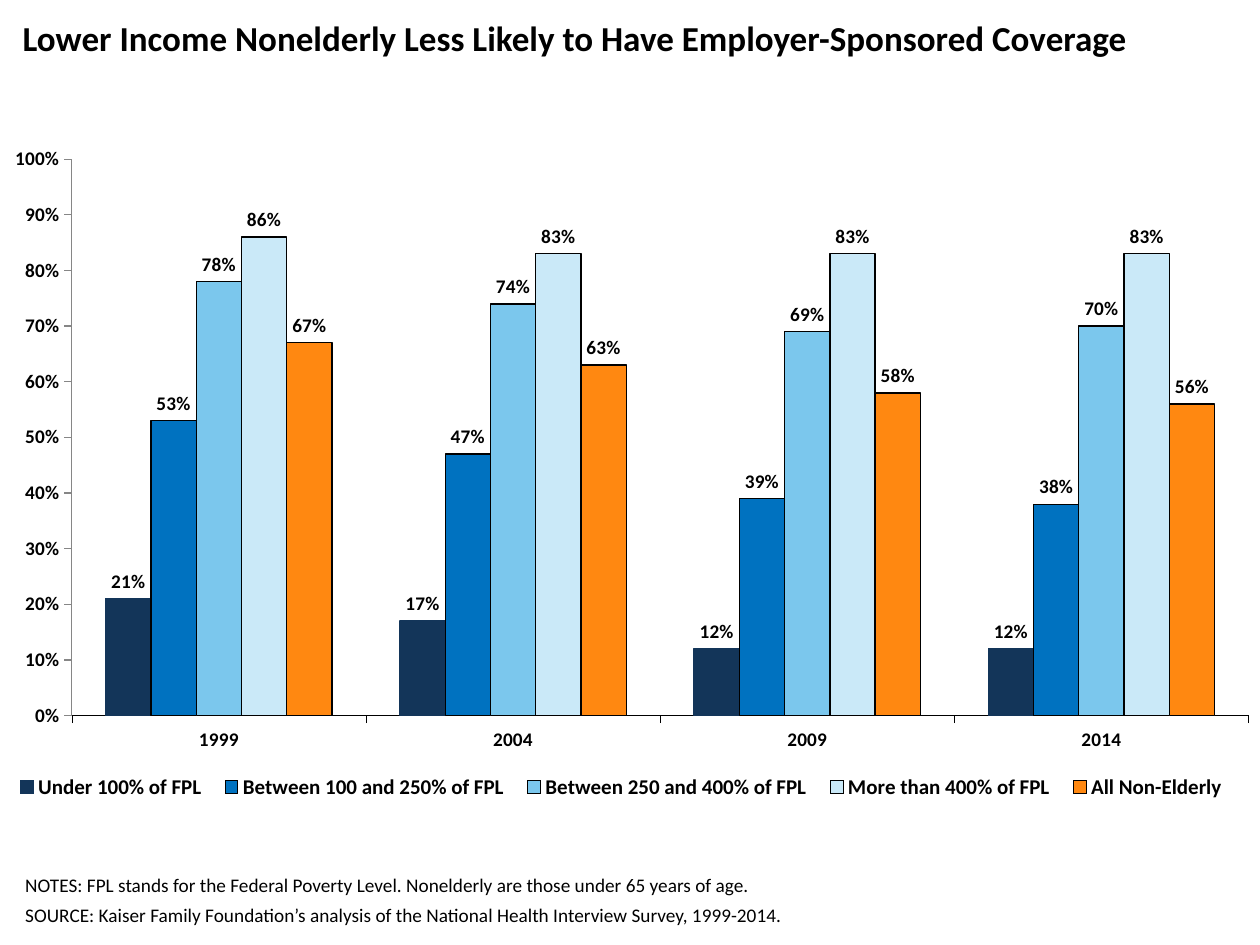
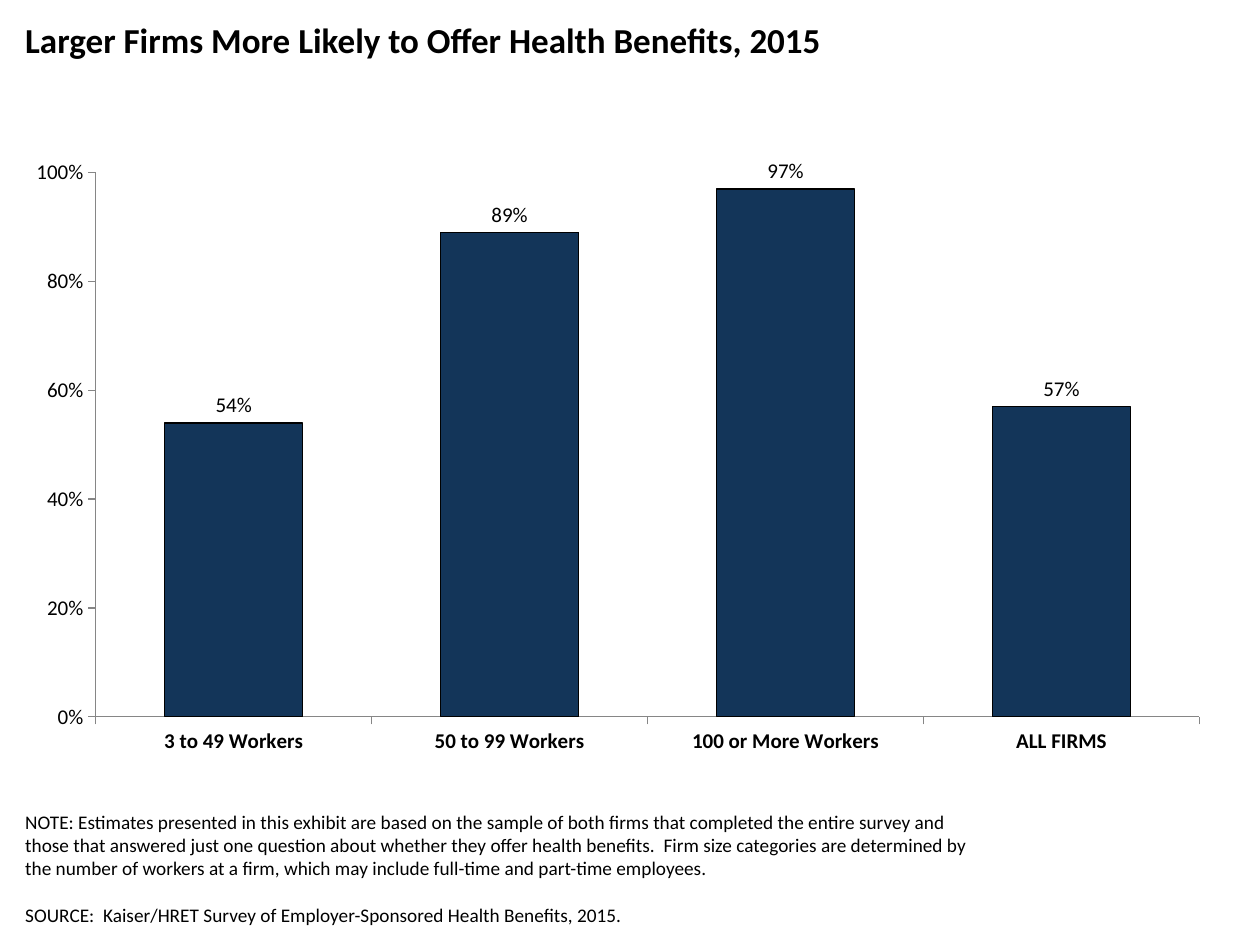
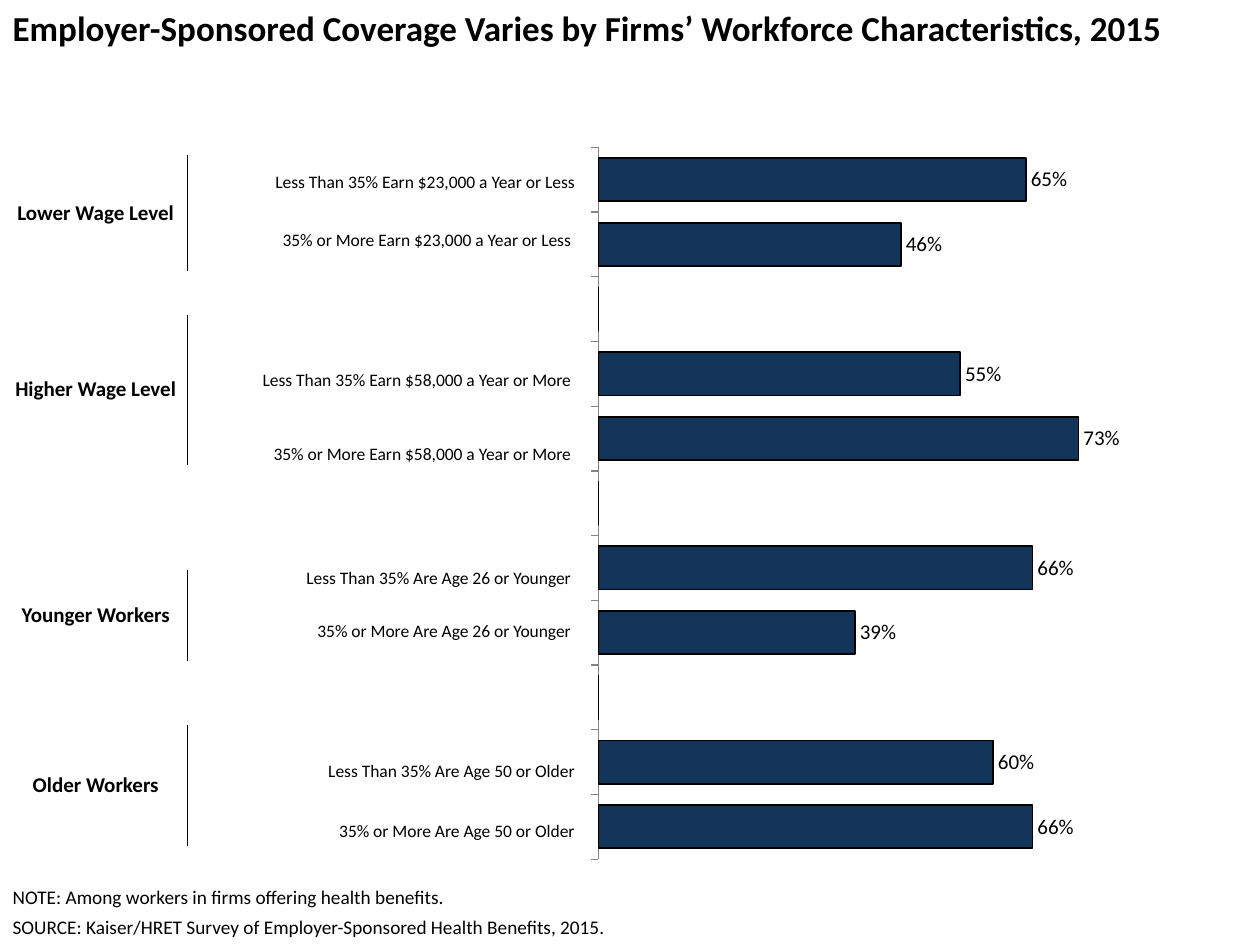
from lxml import etree
from pptx import Presentation
from pptx.chart.data import CategoryChartData as ChartData
from pptx.dml.color import RGBColor
from pptx.enum.chart import XL_CHART_TYPE as ChartType
from pptx.enum.chart import XL_LABEL_POSITION as LabelPosition
from pptx.enum.chart import XL_LEGEND_POSITION as LegendPosition
from pptx.enum.chart import XL_TICK_LABEL_POSITION as TickLabels
from pptx.enum.chart import XL_TICK_MARK as TickMark
from pptx.enum.text import MSO_ANCHOR as Anchor
from pptx.enum.text import MSO_AUTO_SIZE as AutoSize
from pptx.enum.text import PP_ALIGN as Align
from pptx.oxml.ns import qn
from pptx.util import Pt

PX = 9144  # EMU in one px, 100 px to the inch
FONT = "Calibri"
COLORS = {
    "ink": "000000",
    "axis": "868686",
    "navy": "133559",
    "blue": "0072C0",
    "sky": "7BC7ED",
    "pale": "CAE9F8",
    "orange": "FF8811",
}
NO_TABLE_STYLE = "{2D5ABB26-0587-4C30-8999-92F81FD0307C}"

INCOME_SERIES = [
    ("Under 100% of FPL", (0.21, 0.17, 0.12, 0.12), "navy", "navy"),
    ("Between 100 and 250% of FPL", (0.53, 0.47, 0.39, 0.38), "blue", "ink"),
    ("Between 250 and 400% of FPL", (0.78, 0.74, 0.69, 0.7), "sky", "ink"),
    ("More than 400% of FPL", (0.86, 0.83, 0.83, 0.83), "pale", "ink"),
    ("All Non-Elderly", (0.67, 0.63, 0.58, 0.56), "orange", "ink"),
]
FIRM_SERIES = [("Series 1", (0.54, 0.89, 0.97, 0.57), "navy", "ink")]
WORKFORCE_SERIES = [
    ("Series 1", (0.65, 0.46, 0, 0.55, 0.73, 0, 0.66, 0.39, 0, 0.6, 0.66), "navy", "ink")
]

# First row, group name, text lines left free above each detail,
# and the details with their right inset
WORKFORCE_GROUPS = [
    (0, "Lower Wage Level", 1, [("Less Than 35% Earn $23,000 a Year or Less", 0),
                                ("35% or More Earn $23,000 a Year or Less", 3)]),
    (3, "Higher Wage Level", 3, [("Less Than 35% Earn $58,000 a Year or More", 3),
                                 ("35% or More Earn $58,000 a Year or More", 3)]),
    (7, "Younger Workers", 0, [("Less Than 35% Are Age 26 or Younger", 3),
                               ("35% or More Are Age 26 or Younger", 3)]),
    (10, "Older Workers", 2, [("Less Than 35% Are Age 50 or Older", 0),
                              ("35% or More Are Age 50 or Older", 0)]),
]
COLUMN_WIDTHS = [146, 307]
ROW_HEIGHTS = [46, 46, 35, 59, 59, 35, 49, 42, 30, 51, 48, 48, 35]
DETAIL_LINE = 15


def emu(box):
    return [length * PX for length in box]


def rgb(name):
    return RGBColor.from_string(COLORS[name])


def style_font(font, size, bold=False):
    font.name, font.size, font.bold = FONT, Pt(size), bold
    font.color.rgb = rgb("ink")


def write(para, text, size, bold=False, align=Align.LEFT, before=0, after=0, spacing=1.0):
    para.alignment, para.line_spacing = align, spacing
    para.space_before, para.space_after = Pt(before), Pt(after)
    span = para.add_run()
    span.text = text
    style_font(span.font, size, bold)


# Title and notes

def place(holder, box, anchor):
    holder.left, holder.top, holder.width, holder.height = emu(box)
    frame = holder.text_frame
    frame.word_wrap, frame.auto_size = True, AutoSize.NONE
    frame.vertical_anchor = anchor
    return frame


def add_page(deck, title, title_box, notes, notes_box, before=0, after=0):
    page = deck.slides.add_slide(deck.slide_layouts[1])
    frame = place(page.shapes.title, title_box, Anchor.TOP)
    write(frame.paragraphs[0], title, 20, bold=True)

    frame = place(page.placeholders[1], notes_box, Anchor.BOTTOM)
    for index, note in enumerate(notes):
        para = frame.add_paragraph() if index else frame.paragraphs[0]
        properties = para._p.get_or_add_pPr()
        properties.set("marL", "0")
        properties.set("indent", "0")
        etree.SubElement(properties, qn("a:buNone"))
        write(para, note, 11, before=before if index else 0, after=after)
    return page


# Charts

def set_layout(parent, index, box, chart_box, inner=False):
    """Fix a plot area or legend at a px box inside the chart."""
    for old in parent.findall(qn("c:layout")):
        parent.remove(old)
    layout = etree.Element(qn("c:layout"))
    manual = etree.SubElement(layout, qn("c:manualLayout"))
    width, height = chart_box[2:]
    settings = [("layoutTarget", "inner")] if inner else []
    settings += [("xMode", "edge"), ("yMode", "edge")]
    settings += [(key, f"{length / whole:.4f}")
                 for key, length, whole in zip("xywh", box, (width, height) * 2)]
    for key, value in settings:
        etree.SubElement(manual, qn(f"c:{key}")).set("val", value)
    parent.insert(index, layout)


def style_axis(axis, size, bold, line="axis", width=0.75):
    axis.has_major_gridlines = False
    axis.major_tick_mark, axis.minor_tick_mark = TickMark.OUTSIDE, TickMark.NONE
    axis.format.line.color.rgb = rgb(line)
    axis.format.line.width = Pt(width)
    style_font(axis.tick_labels.font, size, bold)


def add_bar_chart(page, box, plot_box, kind, categories, series, gap, step,
                  size=12, bold=False, edge=0.75, label_format="0%"):
    data = ChartData(number_format="0%")
    data.categories = categories
    for name, values, _, _ in series:
        data.add_series(name, values)
    chart = page.shapes.add_chart(kind, *emu(box), data).chart
    chart.has_title = chart.has_legend = False
    style_font(chart.font, size, bold)
    set_layout(chart.element.find(".//" + qn("c:plotArea")), 0, plot_box, box, inner=True)

    style_axis(chart.category_axis, size, bold=True)
    scale = chart.value_axis
    style_axis(scale, size, bold)
    scale.minimum_scale, scale.maximum_scale, scale.major_unit = 0, 1, step
    scale.tick_labels.number_format = "0%"
    scale.tick_labels.number_format_is_linked = False

    plot = chart.plots[0]
    plot.gap_width, plot.vary_by_categories = gap, False
    plot.has_data_labels = True
    labels = plot.data_labels
    labels.show_value, labels.position = True, LabelPosition.OUTSIDE_END
    labels.number_format, labels.number_format_is_linked = label_format, False
    style_font(labels.font, size, bold)
    for bars, (_, _, fill, line) in zip(plot.series, series):
        bars.invert_if_negative = False
        bars.format.fill.solid()
        bars.format.fill.fore_color.rgb = rgb(fill)
        bars.format.line.color.rgb = rgb(line)
        bars.format.line.width = Pt(edge)
    return chart


def add_legend(chart, box, chart_box):
    chart.has_legend = True
    legend = chart.legend
    legend.position, legend.include_in_layout = LegendPosition.BOTTOM, False
    style_font(legend.font, 12, bold=True)
    set_layout(chart.element.find(".//" + qn("c:legend")), 1, box, chart_box)


# Table of workforce groups

def set_border(cell, side):
    line = etree.SubElement(cell._tc.get_or_add_tcPr(), qn(f"a:{side}"), w=str(Pt(1)))
    fill = etree.SubElement(line, qn("a:solidFill"))
    etree.SubElement(fill, qn("a:srgbClr"), val=COLORS["ink"])


def set_insets(cell, left=0, top=0, right=0, bottom=0):
    cell.margin_left, cell.margin_top, cell.margin_right, cell.margin_bottom = emu(
        (left, top, right, bottom))


def add_group_table(page, left, top):
    box = (left, top, sum(COLUMN_WIDTHS), sum(ROW_HEIGHTS))
    frame = page.shapes.add_table(len(ROW_HEIGHTS), len(COLUMN_WIDTHS), *emu(box))
    for style in frame.element.iter(qn("a:tableStyleId")):
        style.text = NO_TABLE_STYLE
    table = frame.table
    table.first_row = table.horz_banding = False
    for column, width in zip(table.columns, COLUMN_WIDTHS):
        column.width = width * PX
    for row, height in zip(table.rows, ROW_HEIGHTS):
        row.height = height * PX
    for cell in table.iter_cells():
        set_insets(cell)

    for first, name, free_lines, details in WORKFORCE_GROUPS:
        label = table.cell(first, 0)
        label.merge(table.cell(first + 1, 0))
        label.vertical_anchor = Anchor.MIDDLE
        set_insets(label, 7, 3, 7, 3)
        write(label.text_frame.paragraphs[0], name, 12, bold=True, align=Align.CENTER)
        for row, (detail, inset) in enumerate(details, first):
            set_border(table.cell(row, 0), "lnR")
            cell = table.cell(row, 1)
            set_border(cell, "lnL")
            set_insets(cell, top=free_lines * DETAIL_LINE, right=inset)
            write(cell.text_frame.paragraphs[0], detail, 10, align=Align.RIGHT, spacing=0.85)

    for cell in table.iter_cells():
        cell.fill.background()


# Slides

def add_income_page(deck):
    page = add_page(
        deck, "Lower Income Nonelderly Less Likely to Have Employer-Sponsored Coverage",
        (8, 8, 980, 65),
        ["NOTES: FPL stands for the Federal Poverty Level. Nonelderly are those under 65 years of age.",
         "SOURCE: Kaiser Family Foundation’s analysis of the National Health Interview Survey, 1999-2014."],
        (10, 708, 910, 32), after=4)
    box = (1, 117, 999, 550)
    chart = add_bar_chart(page, box, (56, 9, 934, 442), ChartType.COLUMN_CLUSTERED,
                          ["1999", "2004", "2009", "2014"], INCOME_SERIES,
                          gap=150, step=0.1, size=11, bold=True)
    style_axis(chart.category_axis, 11, bold=True, line="ink", width=0.25)
    add_legend(chart, (2, 494, 980, 27), box)


def add_firm_page(deck):
    page = add_page(
        deck, "Larger Firms More Likely to Offer Health Benefits, 2015", (10, 10, 980, 100),
        ["NOTE: Estimates presented in this exhibit are based on the sample of both firms that "
         "completed the entire survey and those that answered just one question about whether "
         "they offer health benefits.  Firm size categories are determined by the number of "
         "workers at a firm, which may include full-time and part-time employees.",
         "SOURCE:  Kaiser/HRET Survey of Employer-Sponsored Health Benefits, 2015."],
        (10, 625, 782, 115), before=13.4)
    add_bar_chart(page, (10, 117, 962, 492), (66, 20, 876, 432), ChartType.COLUMN_CLUSTERED,
                  ["3 to 49 Workers", "50 to 99 Workers", "100 or More Workers", "ALL FIRMS"],
                  FIRM_SERIES, gap=100, step=0.2)


def add_workforce_page(deck):
    page = add_page(
        deck, "Employer-Sponsored Coverage Varies by Firms’ Workforce Characteristics, 2015",
        (0, 0, 1000, 117),
        ["NOTE: Among workers in firms offering health benefits.",
         "SOURCE: Kaiser/HRET Survey of Employer-Sponsored Health Benefits, 2015."],
        (0, 680, 920, 70), after=4)
    slots = [str(number) for number in range(1, len(WORKFORCE_SERIES[0][1]) + 1)]
    # The label format leaves the zero bars between groups unlabelled
    chart = add_bar_chart(page, (327, 100, 707, 595), (148, 17, 522, 565),
                          ChartType.BAR_CLUSTERED, slots, WORKFORCE_SERIES,
                          gap=50, step=0.1, edge=1, label_format="0%;;;")
    chart.value_axis.visible = False
    chart.category_axis.reverse_order = True
    chart.category_axis.tick_label_position = TickLabels.NONE
    add_group_table(page, 3, 123)


def main():
    deck = Presentation()
    deck.slide_width, deck.slide_height = emu((1000, 750))
    add_income_page(deck)
    add_firm_page(deck)
    add_workforce_page(deck)
    deck.save("out.pptx")


if __name__ == "__main__":
    main()
